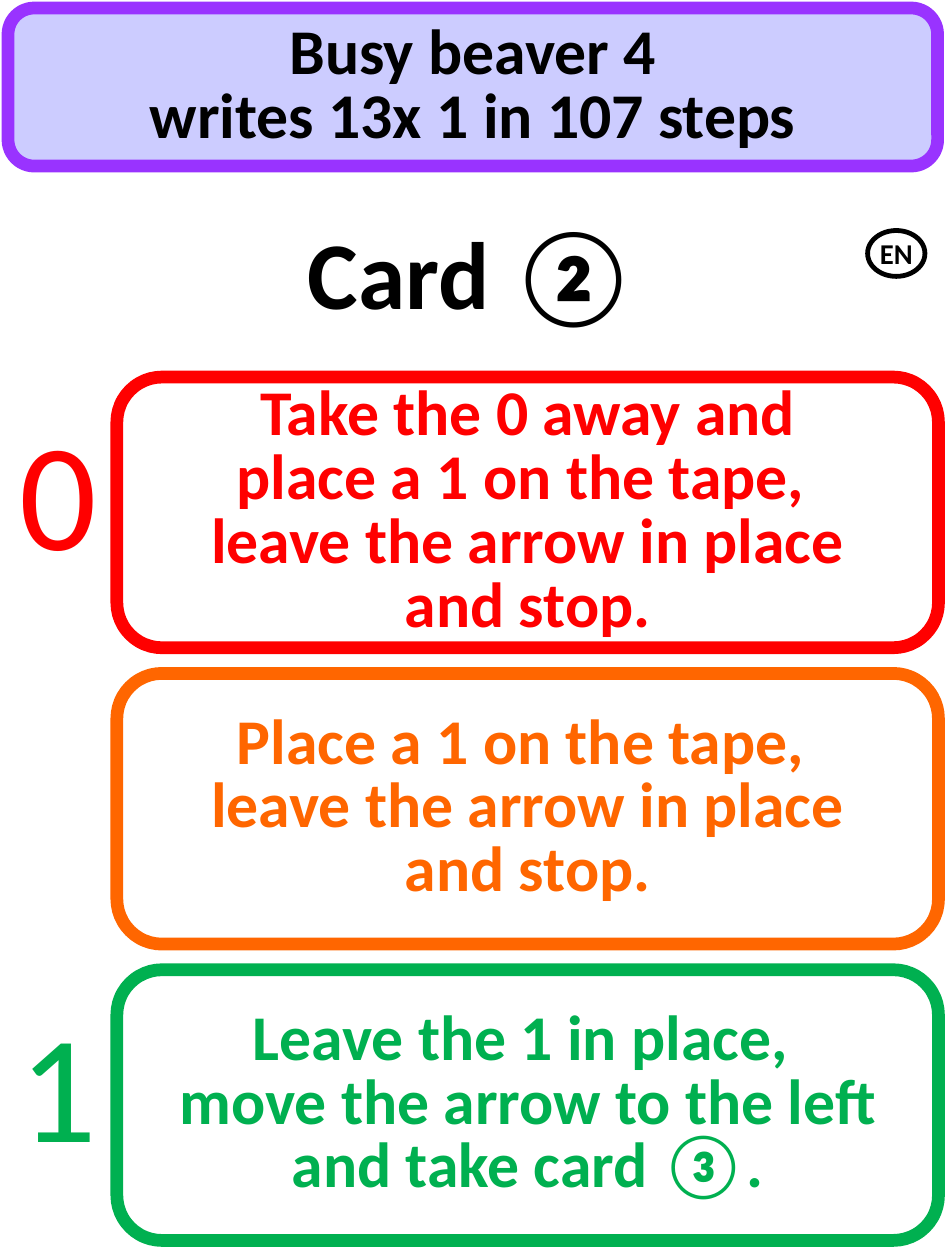
import pptx
import pptx.util
import pptx.dml.color
import pptx.enum.shapes
import pptx.enum.text

Pt = pptx.util.Pt
Kind = pptx.enum.shapes.MSO_SHAPE
Align = pptx.enum.text.PP_ALIGN
Anchor = pptx.enum.text.MSO_ANCHOR

THEME = {
    "font": "Calibri",
    "ink": "000000", "paper": "FFFFFF",
    "banner": "CCCCFF", "edge": "9933FF",
    "red": "FF0000", "orange": "FF6600", "green": "00B050",
    "title": 60, "body": 40, "digit": 96, "label": 18,
    "thick": 8, "thin": 3,
}

BANNER = ["Busy beaver 4", "writes 13x 1 in 107 steps"]
TITLE = ["Card ②"]
LABEL = ["EN"]
RULES = [
    ("0", "red", ["Take the 0 away and", "place a 1 on the tape, ",
                  "leave the arrow in place", "and stop."]),
    ("", "orange", ["Place a 1 on the tape, ",
                    "leave the arrow in place", "and stop."]),
    ("1", "green", ["Leave the 1 in place, ",
                    "move the arrow to the left", "and take card ③."]),
]

WIDTH, HEIGHT = 595.25, 790.88
MARGIN = 5.04
HEAD = (583.7, 99.2)
HEAD_TOPS = (5.04, 120.7)
BOX = (73.4, 236.7, 515.9, 169.9)
PITCH = 186
DIGIT = (9, 63.7, 124)
BADGE = (544.8, 144.7, 36, 28.8)


def color(name):
    return pptx.dml.color.RGBColor.from_string(THEME[name])


def write(frame, lines, size, ink, bold=True, tight=False):
    """Fill a frame with one paragraph, broken into the given lines."""
    para = frame.paragraphs[0]
    if tight:
        para.line_spacing = Pt(THEME["body"])
    for i, line in enumerate(lines):
        if i:
            para.add_line_break()
        run = para.add_run()
        run.text = line
        run.font.name = THEME["font"]
        run.font.size = Pt(THEME[size])
        run.font.bold = bold
        run.font.color.rgb = color(ink)
    return para


def panel(slide, kind, rect, lines, size, ink="ink", fill=None, edge=None,
          width="thick", tight=False):
    """Add a shape with centred text."""
    shape = slide.shapes.add_shape(kind, *map(Pt, rect))
    shape.shadow.inherit = False
    if fill:
        shape.fill.solid()
        shape.fill.fore_color.rgb = color(fill)
    else:
        shape.fill.background()
    if edge:
        shape.line.color.rgb = color(edge)
        shape.line.width = Pt(THEME[width])
    else:
        shape.line.fill.background()
    frame = shape.text_frame
    frame.word_wrap = True
    frame.vertical_anchor = Anchor.MIDDLE
    write(frame, lines, size, ink, tight=tight).alignment = Align.CENTER
    return shape


def digit(slide, text, top, ink):
    drop, width, height = DIGIT
    box = slide.shapes.add_textbox(*map(Pt, (MARGIN, top + drop, width, height)))
    frame = box.text_frame
    frame.word_wrap = False
    frame.auto_size = pptx.enum.text.MSO_AUTO_SIZE.SHAPE_TO_FIT_TEXT
    write(frame, [text], "digit", ink, bold=False)


def badge(slide):
    frame = panel(slide, Kind.OVAL, BADGE, LABEL, "label", fill="paper",
                  edge="ink", width="thin").text_frame
    frame.margin_left = frame.margin_right = 0
    frame.margin_top = frame.margin_bottom = 0


def main():
    deck = pptx.Presentation()
    deck.slide_width = Pt(WIDTH)
    deck.slide_height = Pt(HEIGHT)
    slide = deck.slides.add_slide(deck.slide_layouts[6])

    first, second = HEAD_TOPS
    panel(slide, Kind.ROUNDED_RECTANGLE, (MARGIN, first, *HEAD), BANNER,
          "body", fill="banner", edge="edge", tight=True)
    panel(slide, Kind.ROUNDED_RECTANGLE, (MARGIN, second, *HEAD), TITLE, "title")

    left, start, width, height = BOX
    for i, (mark, ink, lines) in enumerate(RULES):
        top = start + i * PITCH
        panel(slide, Kind.ROUNDED_RECTANGLE, (left, top, width, height), lines,
              "body", ink=ink, edge=ink, tight=True)
        if mark:
            digit(slide, mark, top, ink)

    badge(slide)
    deck.save("out.pptx")


if __name__ == "__main__":
    main()
